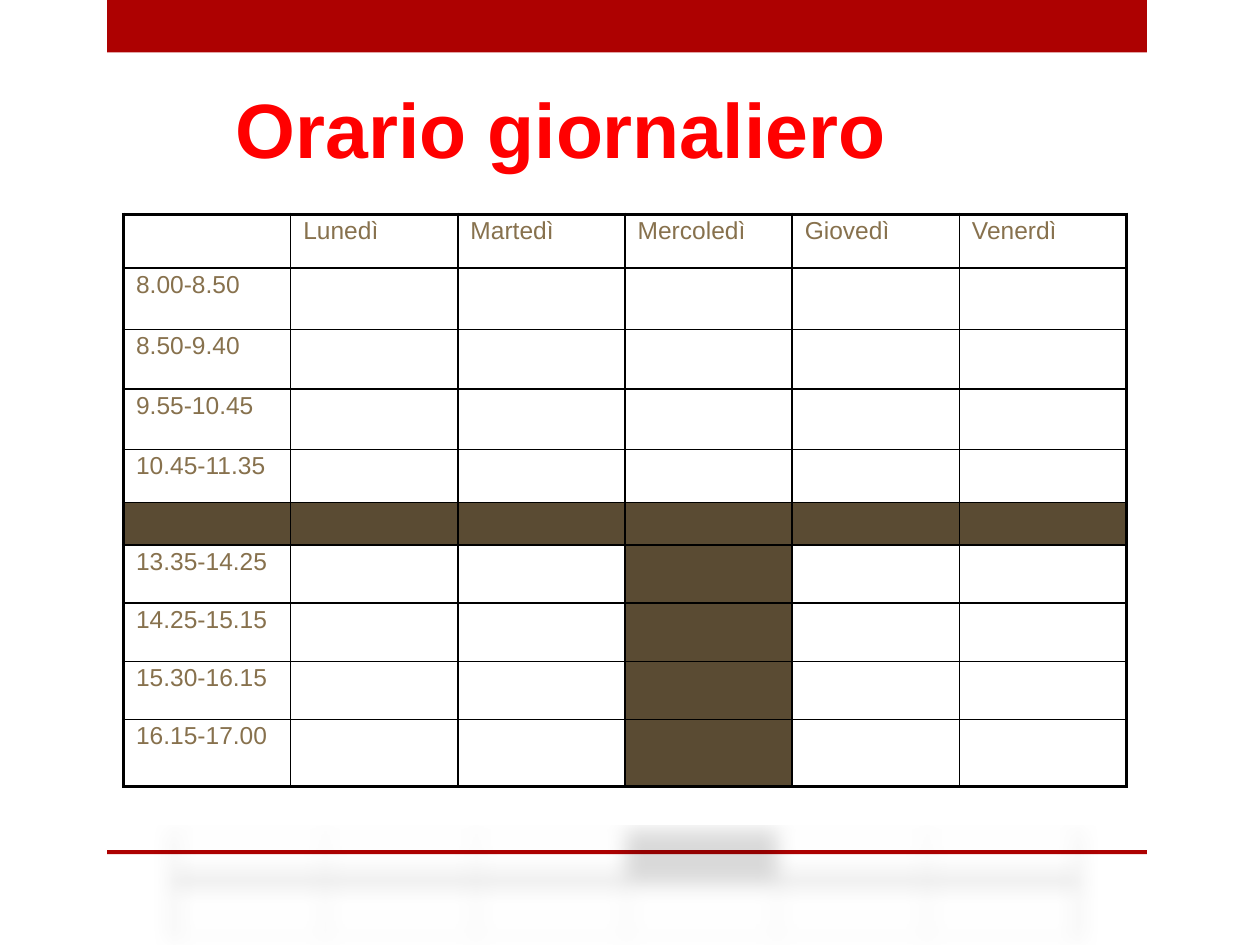
"""Build the daily school timetable slide."""
from dataclasses import dataclass

from lxml.etree import SubElement
from pptx import Presentation
from pptx.dml.color import RGBColor as RGB
from pptx.enum.shapes import MSO_SHAPE as SHAPE
from pptx.oxml import parse_xml
from pptx.oxml.ns import nsdecls, qn
from pptx.util import Cm, Pt


@dataclass(frozen=True)
class Theme:
    font: str = "Arial"
    band: RGB = RGB(0xAD, 0x01, 0x01)
    title: RGB = RGB(0xFF, 0x00, 0x00)
    text: RGB = RGB(0x87, 0x71, 0x4D)
    closed: RGB = RGB(0x5A, 0x4B, 0x33)
    border: RGB = RGB(0x00, 0x00, 0x00)
    title_size: Pt = Pt(44)
    text_size: Pt = Pt(14)
    outer: Pt = Pt(2.25)
    inner: Pt = Pt(1)


theme = Theme()
DAYS = ["Lunedì", "Martedì", "Mercoledì", "Giovedì", "Venerdì"]
HOURS = ["8.00-8.50", "8.50-9.40", "9.55-10.45", "10.45-11.35", "",
         "13.35-14.25", "14.25-15.15", "15.30-16.15", "16.15-17.00"]
HEIGHTS = [1.08, 1.24, 1.2, 1.22, 1.07, 0.86, 1.17, 1.17, 1.17, 1.35]
BREAK_ROW = HOURS.index("") + 1
FREE_COL = DAYS.index("Mercoledì") + 1


def style(p, size, color, bold=False):
    p.font.name, p.font.size, p.font.bold = theme.font, size, bold
    p.font.color.rgb = color


def add_border(cell, side, width):
    ln = SubElement(cell._tc.get_or_add_tcPr(), qn(f"a:ln{side}"), w=str(width))
    fill = SubElement(ln, qn("a:solidFill"))
    SubElement(fill, qn("a:srgbClr"), val=str(theme.border))


prs = Presentation()
prs.slide_width, prs.slide_height = Cm(25.4), Cm(19.05)
s = prs.slides.add_slide(prs.slide_layouts[6])

for top, height in ((0, 1.06), (17.14, 0.08)):
    sp = s.shapes.add_shape(SHAPE.RECTANGLE, Cm(2.16), Cm(top), Cm(20.96), Cm(height))
    sp.shadow.inherit = False
    sp.fill.solid()
    sp.fill.fore_color.rgb = theme.band
    sp.line.fill.background()

tf = s.shapes.add_textbox(Cm(4.5), Cm(1.68), Cm(18.6), Cm(2)).text_frame
tf.word_wrap = True
p = tf.paragraphs[0]
p.text = "Orario giornaliero"
p.line_spacing = 0.93
style(p, theme.title_size, theme.title, bold=True)

rows, cols = len(HOURS) + 1, len(DAYS) + 1
table = s.shapes.add_table(rows, cols, Cm(2.49), Cm(4.32),
                           Cm(20.22), Cm(sum(HEIGHTS))).table
table.first_row = table.horz_banding = False
table._tbl.tblPr.insert(0, parse_xml(
    f'<a:effectLst {nsdecls("a")}><a:outerShdw blurRad="152400" dist="317500" '
    'dir="5400000" sx="90000" sy="-19000" rotWithShape="0">'
    '<a:prstClr val="black"><a:alpha val="15000"/></a:prstClr>'
    '</a:outerShdw></a:effectLst>'))
for col in table.columns:
    col.width = Cm(3.37)

for i, height in enumerate(HEIGHTS):
    table.rows[i].height = Cm(height)
    for j in range(cols):
        cell = table.cell(i, j)
        edges = {"L": j == 0, "R": j == cols - 1, "T": i == 0, "B": i == rows - 1}
        for side, is_outer in edges.items():
            add_border(cell, side, theme.outer if is_outer else theme.inner)
        if i == BREAK_ROW or (i > BREAK_ROW and j == FREE_COL):
            cell.fill.solid()
            cell.fill.fore_color.rgb = theme.closed
        else:
            cell.fill.background()
        p = cell.text_frame.paragraphs[0]
        if i == 0 and j > 0:
            p.text = DAYS[j - 1]
        elif j == 0 and i > 0:
            p.text = HOURS[i - 1]
        p.line_spacing, p.space_before = 0.87, Pt(8)
        style(p, theme.text_size, theme.text)
        if not p.text:
            SubElement(p._p, qn("a:endParaRPr"), sz=str(int(theme.text_size.pt * 100)))

prs.save("out.pptx")
